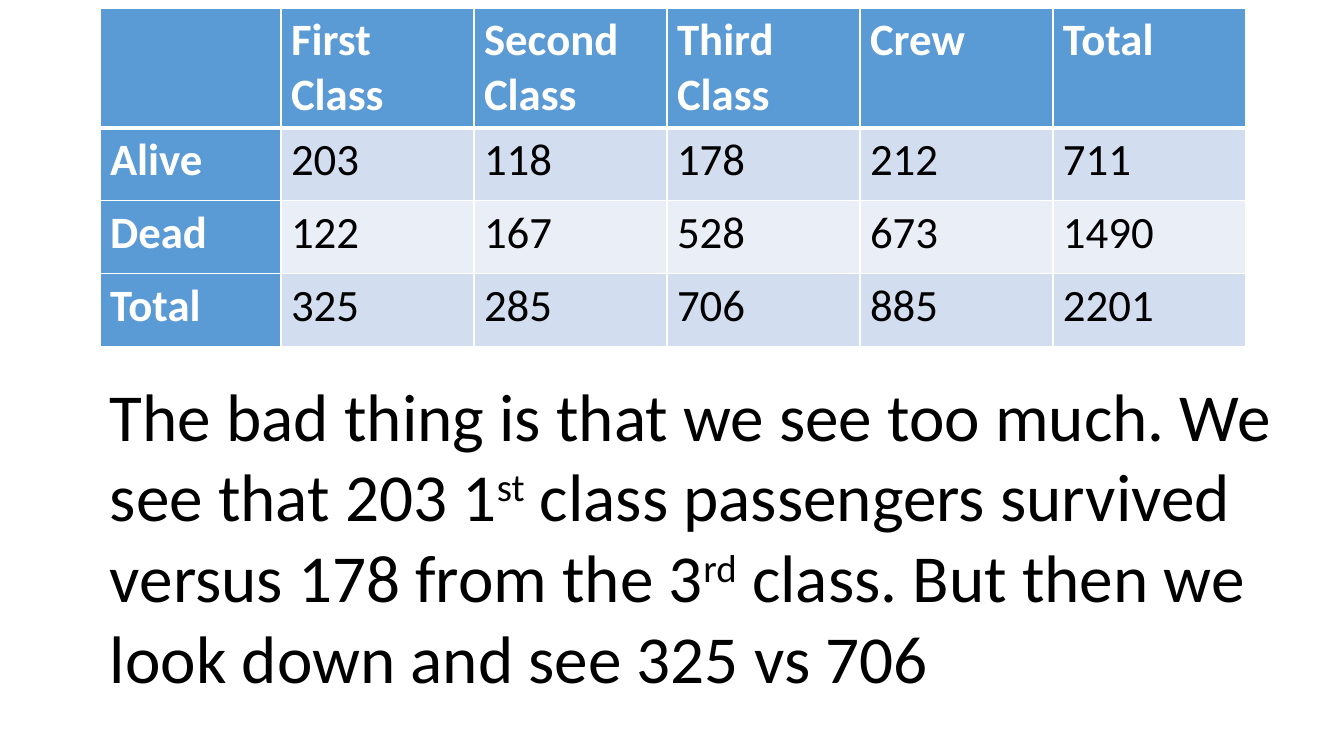
from dataclasses import dataclass

from lxml import etree
from pptx import Presentation
from pptx import util as u
from pptx.dml.color import RGBColor
from pptx.enum import text
from pptx.oxml import ns

SURVIVAL = [
    ("", "First Class", "Second Class", "Third Class", "Crew", "Total"),
    ("Alive", "203", "118", "178", "212", "711"),
    ("Dead", "122", "167", "528", "673", "1490"),
    ("Total", "325", "285", "706", "885", "2201"),
]
COMMENT = [
    ("The bad thing is that we see too much. We see that 203 1", False),
    ("st", True),
    (" class passengers survived versus 178 from the 3", False),
    ("rd", True),
    (" class. But then we look down and see 325 vs 706", False),
]


@dataclass(frozen=True)
class Theme:
    font: str = "Calibri"
    heading: str = "5B9BD5"
    bands: tuple = ("EAEFF7", "D2DEEF")
    light: str = "FFFFFF"
    dark: str = "000000"
    table_size: int = 32
    comment_size: int = 48
    rule: int = 1
    heading_rule: int = 3
    superscript: int = 30000


THEME = Theme()
SLIDE_WIDTH, SLIDE_HEIGHT = 1344, 756
LEFT, TABLE_TOP = 100, 8
LABEL_WIDTH, VALUE_WIDTH = 181, 193
HEADING_HEIGHT, BODY_HEIGHT = 119, 73
COMMENT_TOP, COMMENT_WIDTH, COMMENT_HEIGHT = 369, 1194, 336


def px(length):
    return u.Emu(round(length * 914400 / 100.8))


def style(run, size, color, bold=False):
    run.font.name = THEME.font
    run.font.size = u.Pt(size)
    run.font.bold = bold
    run.font.color.rgb = RGBColor.from_string(color)


def add_border(cell, side, points):
    line = etree.SubElement(cell._tc.get_or_add_tcPr(), ns.qn(f"a:ln{side}"), w=str(u.Pt(points)))
    fill = etree.SubElement(line, ns.qn("a:solidFill"))
    etree.SubElement(fill, ns.qn("a:srgbClr"), val=THEME.light)


def fill_cell(cell, words, row, column):
    is_heading = row == 0 or column == 0
    under_heading = {(0, "B"), (1, "T")}
    for side in "LRTB":
        add_border(cell, side, THEME.heading_rule if (row, side) in under_heading else THEME.rule)
    cell.fill.solid()
    cell.fill.fore_color.rgb = RGBColor.from_string(THEME.heading if is_heading else THEME.bands[row % 2])
    cell.text_frame.text = words
    for run in cell.text_frame.paragraphs[0].runs:
        style(run, THEME.table_size, THEME.light if is_heading else THEME.dark, is_heading)


def add_survival(slide):
    widths = [LABEL_WIDTH] + [VALUE_WIDTH] * (len(SURVIVAL[0]) - 1)
    heights = [HEADING_HEIGHT] + [BODY_HEIGHT] * (len(SURVIVAL) - 1)
    survival = slide.shapes.add_table(
        len(heights), len(widths), px(LEFT), px(TABLE_TOP), px(sum(widths)), px(sum(heights))
    ).table
    survival.first_col = True
    for column, width in zip(survival.columns, widths):
        column.width = px(width)
    for row, height in zip(survival.rows, heights):
        row.height = px(height)
    for r, entries in enumerate(SURVIVAL):
        for c, words in enumerate(entries):
            fill_cell(survival.cell(r, c), words, r, c)


def add_comment(slide):
    comment = slide.shapes.add_textbox(
        px(LEFT), px(COMMENT_TOP), px(COMMENT_WIDTH), px(COMMENT_HEIGHT)
    ).text_frame
    comment.word_wrap = True
    comment.auto_size = text.MSO_AUTO_SIZE.SHAPE_TO_FIT_TEXT
    for words, raised in COMMENT:
        run = comment.paragraphs[0].add_run()
        run.text = words
        style(run, THEME.comment_size, THEME.dark)
        if raised:
            run._r.get_or_add_rPr().set("baseline", str(THEME.superscript))


def main():
    deck = Presentation()
    deck.slide_width, deck.slide_height = px(SLIDE_WIDTH), px(SLIDE_HEIGHT)
    slide = deck.slides.add_slide(deck.slide_layouts[6])
    add_survival(slide)
    add_comment(slide)
    deck.save("out.pptx")


if __name__ == "__main__":
    main()
